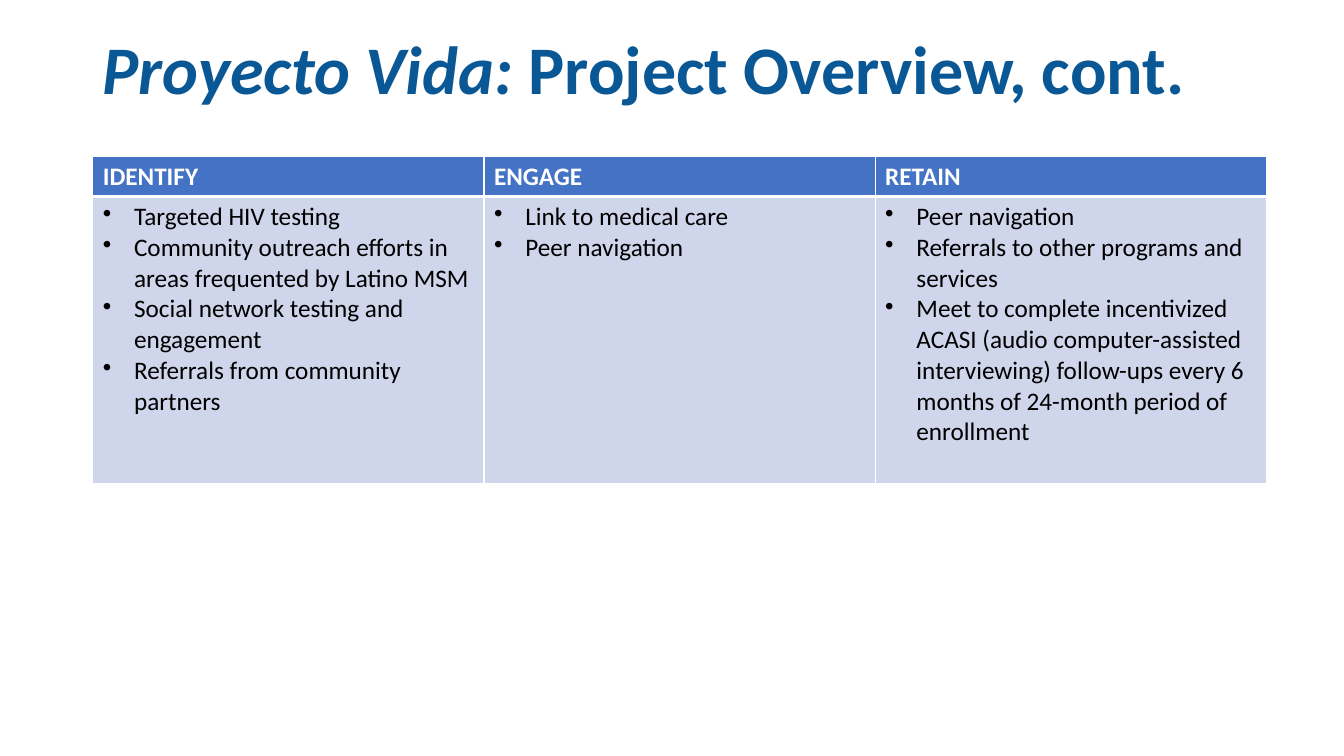
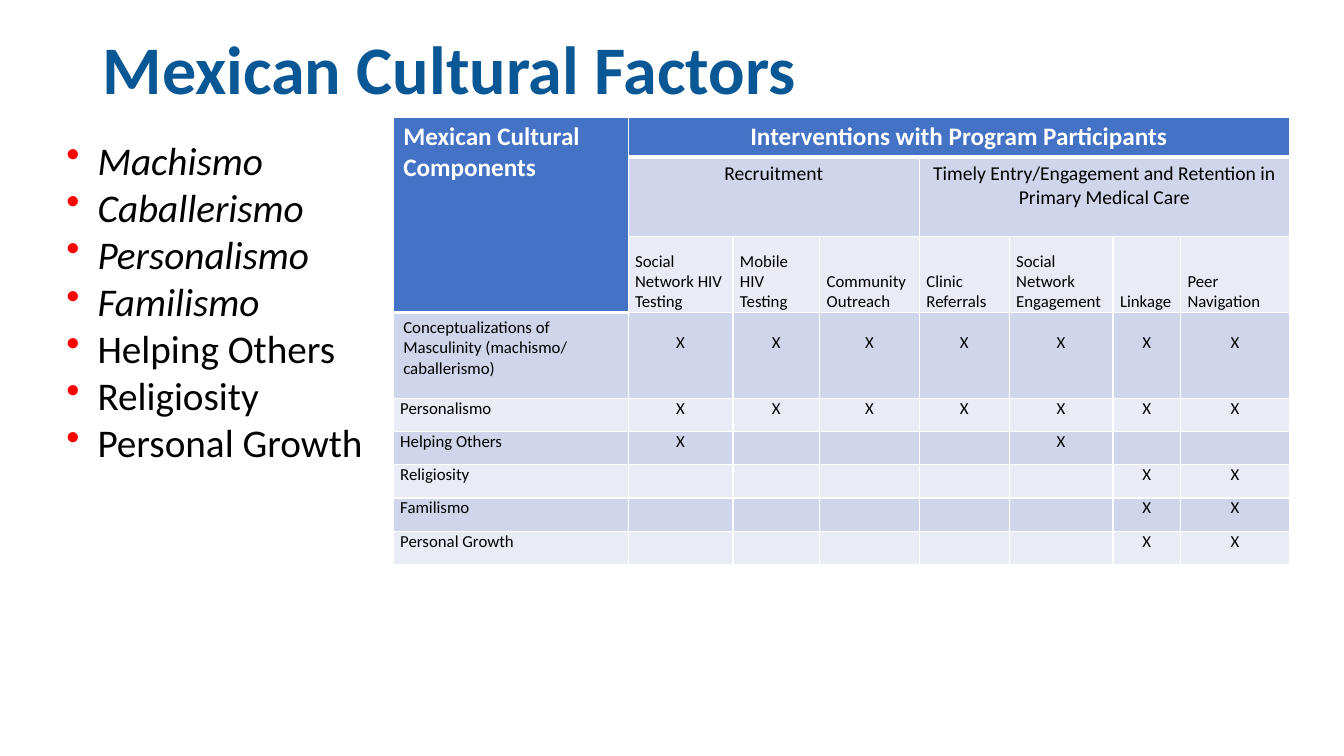
from dataclasses import dataclass, replace

from lxml.etree import SubElement
from pptx import Presentation
from pptx.dml.color import RGBColor
from pptx.enum.text import MSO_ANCHOR, MSO_AUTO_SIZE, PP_ALIGN
from pptx.oxml.ns import qn
from pptx.slide import Slide
from pptx.table import Table, _Cell
from pptx.text.text import TextFrame, _Paragraph
from pptx.util import Pt

PX = 9144  # EMU in one px, 100 px to the inch
FONT = "Calibri"
NAVY = RGBColor(0x09, 0x58, 0x95)
BLUE = RGBColor(0x44, 0x72, 0xC4)
DARK = RGBColor(0xCF, 0xD5, 0xEA)
LIGHT = RGBColor(0xE9, 0xEB, 0xF5)
RED = RGBColor(0xFF, 0x00, 0x00)
WHITE = RGBColor(0xFF, 0xFF, 0xFF)
BLACK = RGBColor(0x00, 0x00, 0x00)


@dataclass(frozen=True)
class Look:
    size: float
    color: RGBColor = BLACK
    bold: bool = False
    align: PP_ALIGN = PP_ALIGN.LEFT
    bullet: RGBColor | None = None


@dataclass(frozen=True)
class Style:
    """How one table cell is filled, ruled and padded."""
    look: Look
    fill: RGBColor
    side: int = 10
    top: int = 5
    foot: int = 5
    rule: int = 1
    anchor: MSO_ANCHOR = MSO_ANCHOR.TOP


@dataclass(frozen=True)
class Factor:
    name: str
    marks: str


TITLE = Look(48.6, NAVY, bold=True)
HEAD = Style(Look(18, WHITE, bold=True), BLUE, rule=3)
MID = replace(HEAD, look=replace(HEAD.look, align=PP_ALIGN.CENTER))
ITEMS = Style(Look(18, bullet=BLACK), DARK)
GROUP = Style(Look(14, align=PP_ALIGN.CENTER), DARK)
NAME = Style(Look(12), LIGHT, side=7, top=0, foot=0)
STEP = replace(NAME, anchor=MSO_ANCHOR.BOTTOM)
MARK = replace(NAME, look=Look(12, align=PP_ALIGN.CENTER))

PHASES = {
    "IDENTIFY": [
        "Targeted HIV testing",
        "Community outreach efforts in areas frequented by Latino MSM",
        "Social network testing and engagement",
        "Referrals from community partners",
    ],
    "ENGAGE": ["Link to medical care", "Peer navigation"],
    "RETAIN": [
        "Peer navigation",
        "Referrals to other programs and services",
        "Meet to complete incentivized ACASI (audio computer-assisted "
        "interviewing) follow-ups every 6 months of 24-month period of enrollment",
    ],
}
SPANISH = ["Machismo", "Caballerismo", "Personalismo", "Familismo"]
ENGLISH = ["Helping Others", "Religiosity", "Personal Growth"]
STEPS = [
    "Social Network HIV Testing", "Mobile HIV Testing", "Community Outreach",
    "Clinic Referrals", "Social Network Engagement", "Linkage", "Peer Navigation",
]
FACTORS = [
    Factor("Conceptualizations of Masculinity (machismo/\ncaballerismo)", "XXXXXXX"),
    Factor("Personalismo", "XXXXXXX"),
    Factor("Helping Others", "X   X  "),
    Factor("Religiosity", "     XX"),
    Factor("Familismo", "     XX"),
    Factor("Personal Growth", "     XX"),
]


def dot(para: _Paragraph, color: RGBColor) -> None:
    """Give the paragraph a hanging bullet."""
    props = para._p.get_or_add_pPr()
    props.set("marL", str(31 * PX))
    props.set("indent", str(-31 * PX))
    tint = SubElement(props, qn("a:buClr"))
    SubElement(tint, qn("a:srgbClr"), val=str(color))
    SubElement(props, qn("a:buChar"), char="•")


def dress(para: _Paragraph, look: Look) -> None:
    para.alignment = look.align
    if look.bullet is not None:
        dot(para, look.bullet)
    font = para.font
    font.name = FONT
    font.size = Pt(look.size)
    font.bold = look.bold
    font.color.rgb = look.color


def write(frame: TextFrame, text: str, look: Look) -> None:
    frame.text = text
    for para in frame.paragraphs:
        dress(para, look)


def add_box(slide: Slide, left: int, top: int, wide: int, high: int) -> TextFrame:
    box = slide.shapes.add_textbox(left * PX, top * PX, wide * PX, high * PX)
    box.text_frame.word_wrap = True
    return box.text_frame


def add_title(slide: Slide, text: str, lead: str = "") -> None:
    """Write the title, with an italic lead."""
    frame = add_box(slide, 92, 26, 1150, 91)
    frame.vertical_anchor = MSO_ANCHOR.MIDDLE
    para = frame.paragraphs[0]
    para.line_spacing = 0.9
    dress(para, TITLE)
    if lead:
        run = para.add_run()
        run.text = lead
        run.font.italic = True
    para.add_run().text = text


def add_grid(slide: Slide, left: int, top: int,
             cols: list[int], rows: list[int]) -> Table:
    shape = slide.shapes.add_table(len(rows), len(cols), left * PX, top * PX,
                                   sum(cols) * PX, sum(rows) * PX)
    table = shape.table
    table.first_row = table.horz_banding = False
    for col, wide in zip(table.columns, cols):
        col.width = wide * PX
    for row, high in zip(table.rows, rows):
        row.height = high * PX
    return table


def rule(cell: _Cell, foot: int) -> None:
    """Draw white cell borders, the lower one foot points wide."""
    props = cell._tc.get_or_add_tcPr()
    for tag, wide in (("lnL", 1), ("lnR", 1), ("lnT", 1), ("lnB", foot)):
        line = SubElement(props, qn(f"a:{tag}"), w=str(Pt(wide)))
        fill = SubElement(line, qn("a:solidFill"))
        SubElement(fill, qn("a:srgbClr"), val=str(WHITE))


def put(cell: _Cell, text: str, style: Style) -> None:
    rule(cell, style.rule)
    cell.fill.solid()
    cell.fill.fore_color.rgb = style.fill
    cell.margin_left = cell.margin_right = style.side * PX
    cell.margin_top = style.top * PX
    cell.margin_bottom = style.foot * PX
    cell.vertical_anchor = style.anchor
    write(cell.text_frame, text, style.look)


def span(table: Table, row: int, first: int, last: int,
         text: str, style: Style, end: int | None = None) -> None:
    """Merge a block of cells, down to row end, and fill it."""
    end = row if end is None else end
    for line in range(row, end + 1):
        for col in range(first, last + 1):
            put(table.cell(line, col), "", style)
    head = table.cell(row, first)
    head.merge(table.cell(end, last))
    write(head.text_frame, text, style.look)


def add_phases(slide: Slide) -> None:
    table = add_grid(slide, 92, 155, [388] * len(PHASES), [40, 285])
    for col, (name, items) in enumerate(PHASES.items()):
        put(table.cell(0, col), name, HEAD)
        put(table.cell(1, col), "\n".join(items), ITEMS)


def add_list(slide: Slide) -> None:
    frame = add_box(slide, 56, 130, 334, 340)
    frame.auto_size = MSO_AUTO_SIZE.SHAPE_TO_FIT_TEXT
    write(frame, "\n".join(SPANISH + ENGLISH), Look(28, bullet=RED))
    for para in frame.paragraphs[:len(SPANISH)]:
        para.font.italic = True


def add_matrix(slide: Slide) -> None:
    cols = [233, 104, 86, 99, 89, 103, 67, 108]
    table = add_grid(slide, 390, 116, cols, [40, 79, 75, 85] + [33] * 5)
    span(table, 0, 0, 0, "Mexican Cultural\nComponents", HEAD, end=2)
    span(table, 0, 1, 7, "Interventions with Program Participants", MID)
    span(table, 1, 1, 3, "Recruitment", GROUP)
    span(table, 1, 4, 7,
         "Timely Entry/Engagement and Retention in Primary Medical Care", GROUP)
    for col, step in enumerate(STEPS, 1):
        put(table.cell(2, col), step, STEP)
    for num, factor in enumerate(FACTORS):
        fill = LIGHT if num % 2 else DARK
        name, mark = replace(NAME, fill=fill), replace(MARK, fill=fill)
        if num == 0:
            name = replace(name, side=10, top=5, foot=5)
            mark = replace(mark, top=20)
        put(table.cell(num + 3, 0), factor.name, name)
        for col, sign in enumerate(factor.marks, 1):
            put(table.cell(num + 3, col), sign.strip(), mark)


def main() -> None:
    deck = Presentation()
    deck.slide_width, deck.slide_height = 1333 * PX, 750 * PX
    blank = deck.slide_layouts[6]

    slide = deck.slides.add_slide(blank)
    add_title(slide, " Project Overview, cont.", lead="Proyecto Vida:")
    add_phases(slide)

    slide = deck.slides.add_slide(blank)
    add_title(slide, "Mexican Cultural Factors")
    add_matrix(slide)
    add_list(slide)

    deck.save("out.pptx")


if __name__ == "__main__":
    main()
